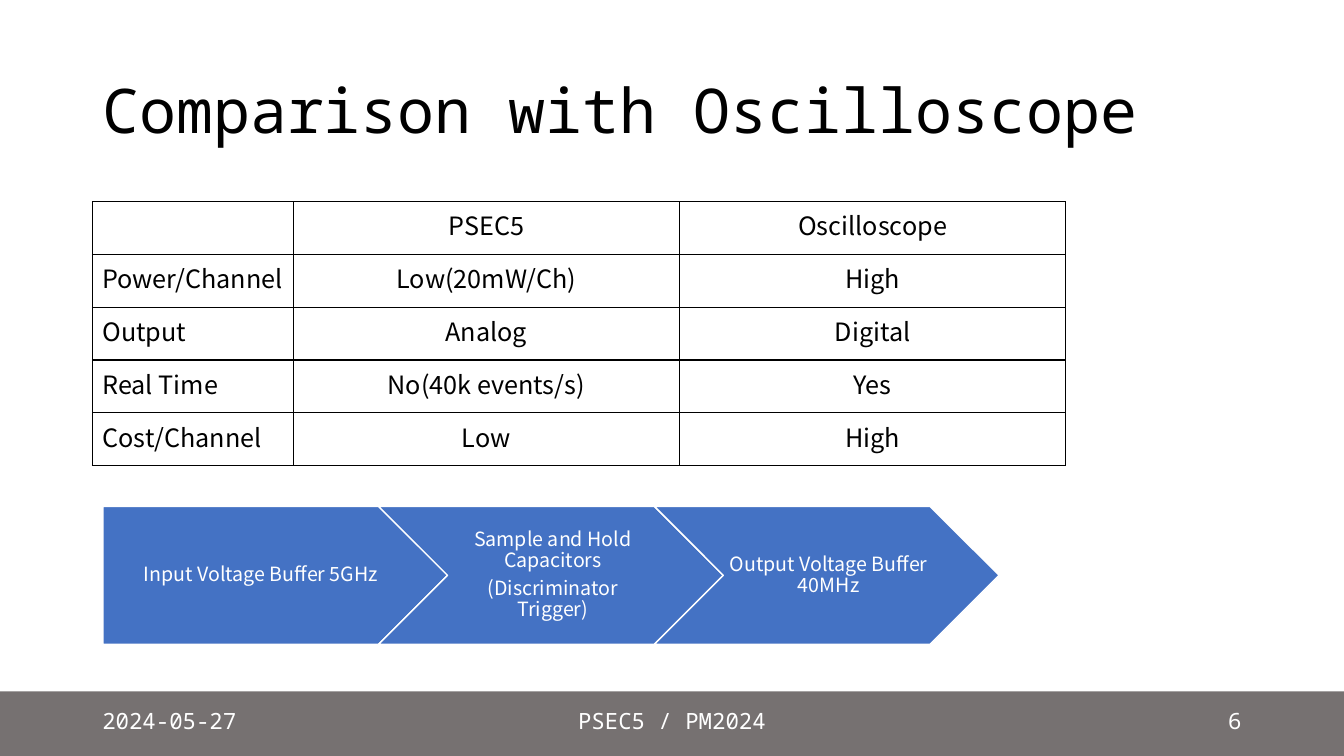
from lxml import etree
from pptx import Presentation
from pptx.dml.color import RGBColor
from pptx.enum.shapes import MSO_SHAPE
from pptx.enum.text import MSO_ANCHOR, PP_ALIGN
from pptx.oxml.ns import qn
from pptx.util import Pt

RECT, PLATE, CHEVRON = MSO_SHAPE.RECTANGLE, MSO_SHAPE.PENTAGON, MSO_SHAPE.CHEVRON
LEFT, MID, RIGHT = PP_ALIGN.LEFT, PP_ALIGN.CENTER, PP_ALIGN.RIGHT
MIDDLE = MSO_ANCHOR.MIDDLE
SANS, MONO = "Noto Sans CJK KR", "Noto Sans Mono"
COLORS = {"bar": "767171", "step": "4472C4", "white": "FFFFFF", "black": "000000"}
HUES = {name: RGBColor.from_string(code) for name, code in COLORS.items()}

prs = Presentation()
prs.slide_width, prs.slide_height = Pt(960), Pt(540)
slide = prs.slides.add_slide(prs.slide_layouts[6])
shapes = slide.shapes


def style(par, size, face, hue, align):
    par.alignment = align
    par.font.size, par.font.name = Pt(size), face
    par.font.color.rgb = HUES[hue]


def add_label(text, box, size, hue, align):
    """Add a one-paragraph monospaced text box, centred vertically."""
    frame = shapes.add_textbox(*map(Pt, box)).text_frame
    frame.word_wrap, frame.vertical_anchor = True, MIDDLE
    frame.text = text
    style(frame.paragraphs[0], size, MONO, hue, align)
    return frame.paragraphs[0]


# Footer bar and title
bar = shapes.add_shape(RECT, 0, Pt(493.9), Pt(960), Pt(46.1))
bar.shadow.inherit = False
bar.fill.solid()
bar.fill.fore_color.rgb = HUES["bar"]
bar.line.fill.background()

title = add_label("Comparison with Oscilloscope", (66, 28.75, 828, 104.4), 44, "black", LEFT)
title.line_spacing = 0.9

# Comparison table
ROWS = [
    ("", "PSEC5", "Oscilloscope"),
    ("Power/Channel", "Low(20mW/Ch)", "High"),
    ("Output", "Analog", "Digital"),
    ("Real Time", "No(40k events/s)", "Yes"),
    ("Cost/Channel", "Low", "High"),
]
WIDTHS = (143.4, 276, 276)
HIGH = 37.75
table = shapes.add_table(len(ROWS), len(WIDTHS), Pt(66), Pt(144),
                         Pt(sum(WIDTHS)), Pt(HIGH * len(ROWS))).table
table.first_row = table.horz_banding = False
for col, width in zip(table.columns, WIDTHS):
    col.width = Pt(width)
for r, row in enumerate(ROWS):
    table.rows[r].height = Pt(HIGH)
    for c, text in enumerate(row):
        cell = table.cell(r, c)
        cell.text = text
        style(cell.text_frame.paragraphs[0], 18, SANS, "black", MID if c else LEFT)
        props = cell._tc.get_or_add_tcPr()
        for side in ("a:lnL", "a:lnR", "a:lnT", "a:lnB"):
            edge = etree.SubElement(props, qn(side), w=str(Pt(1)))
            fill = etree.SubElement(edge, qn("a:solidFill"))
            etree.SubElement(fill, qn("a:srgbClr"), val=COLORS["black"])
        cell.fill.background()

# Footer texts
add_label("2024-05-27", (66, 500.5, 216, 28.75), 16, "white", LEFT)
add_label("PSEC5 / PM2024", (318, 500.5, 324, 28.75), 16, "white", MID)
add_label("6", (678, 500.5, 216, 28.75), 16, "white", RIGHT)

# Signal chain
STEPS = [
    (PLATE, 5.6, ["Input Voltage Buffer 5GHz"]),
    (CHEVRON, 4.2, ["Sample and Hold Capacitors", "(Discriminator Trigger)"]),
    (CHEVRON, 4.2, ["Output Voltage Buffer 40MHz"]),
]
WIDE, TALL = 246.2, 98.5
for i, (kind, inset, lines) in enumerate(STEPS):
    step = shapes.add_shape(kind, Pt(73.5 + i * WIDE * 0.8), Pt(361.7), Pt(WIDE), Pt(TALL))
    step.shadow.inherit = False
    step.fill.solid()
    step.fill.fore_color.rgb = HUES["step"]
    step.line.color.rgb = HUES["white"]
    step.line.width = Pt(1)
    frame = step.text_frame
    frame.word_wrap, frame.vertical_anchor = True, MIDDLE
    frame.margin_left, frame.margin_right = Pt(inset), Pt(1.4)
    frame.margin_top = frame.margin_bottom = Pt(2.8)
    frame.text = "\n".join(lines)
    for par in frame.paragraphs:
        style(par, 14, SANS, "white", MID)
        par.line_spacing, par.space_after = 0.9, Pt(4.9)

prs.save("out.pptx")
